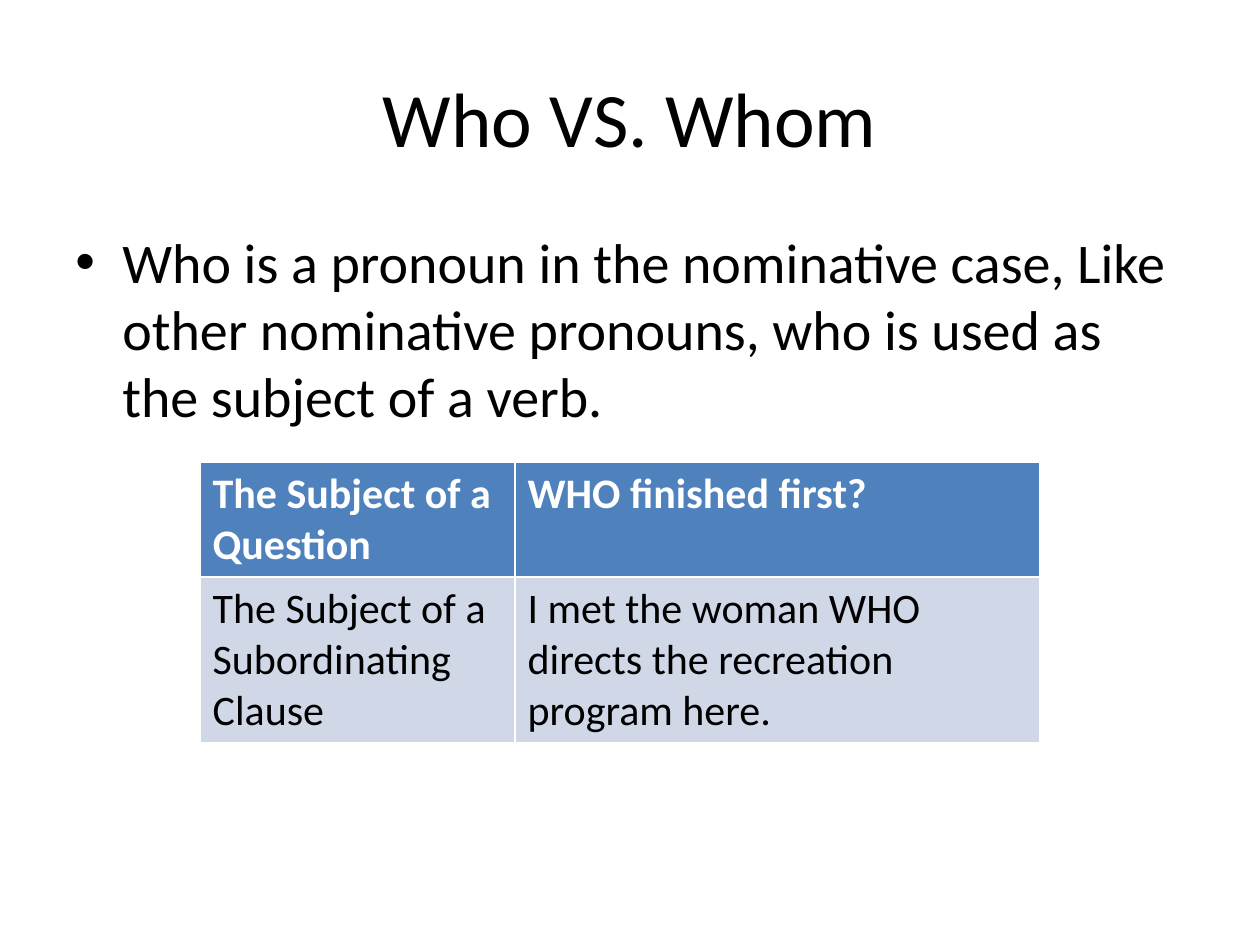
"""Build a slide on who versus whom, with a table of example sentences."""
from lxml import etree
from pptx import Presentation
from pptx import util as u
from pptx.dml.color import RGBColor
from pptx.enum import text
from pptx.oxml import ns

SCALE = 914400 / 126


def px(length):
    return u.Emu(round(length * SCALE))


def style(paragraph, size, color, bold=False):
    font = paragraph.font
    font.name, font.size, font.bold = "Calibri", u.Pt(size), bold
    font.color.rgb = RGBColor.from_string(color)


presentation = Presentation()
presentation.slide_width, presentation.slide_height = px(1260), px(945)
slide = presentation.slides.add_slide(presentation.slide_layouts[6])

title = slide.shapes.add_textbox(px(63), px(38), px(1134), px(158)).text_frame
title.word_wrap = True
title.vertical_anchor = text.MSO_ANCHOR.MIDDLE
title.text = "Who VS. Whom"
title.paragraphs[0].alignment = text.PP_ALIGN.CENTER
style(title.paragraphs[0], 44, "000000")

body = slide.shapes.add_textbox(px(63), px(221), px(1134), px(624)).text_frame
body.word_wrap = True
body.text = (
    "Who is a pronoun in the nominative case, Like other nominative pronouns, "
    "who is used as the subject of a verb."
)
paragraph = body.paragraphs[0]
paragraph.space_before = u.Pt(6.4)
style(paragraph, 32, "000000")
properties = paragraph._p.get_or_add_pPr()
properties.set("marL", str(px(47)))
properties.set("indent", str(px(-47)))
bullet_font = etree.Element(ns.qn("a:buFont"), typeface="Arial")
bullet = etree.Element(ns.qn("a:buChar"), char="•")
properties.find(ns.qn("a:spcBef")).addnext(bullet_font)
bullet_font.addnext(bullet)

rows = [
    ("The Subject of a Question", "WHO finished first?"),
    (
        "The Subject of a Subordinating Clause",
        "I met the woman WHO directs the recreation program here.",
    ),
]
row_styles = [("4F81BD", "FFFFFF", True), ("D0D8E8", "000000", False)]
table = slide.shapes.add_table(2, 2, px(200), px(462), px(840), px(281)).table
for column, width in zip(table.columns, (315, 525)):
    column.width = px(width)
for row, height, words, (fill, color, bold) in zip(table.rows, (115, 166), rows, row_styles):
    row.height = px(height)
    for cell, wording in zip(row.cells, words):
        cell.text = wording
        cell.fill.solid()
        cell.fill.fore_color.rgb = RGBColor.from_string(fill)
        style(cell.text_frame.paragraphs[0], 24, color, bold)

presentation.save("out.pptx")
